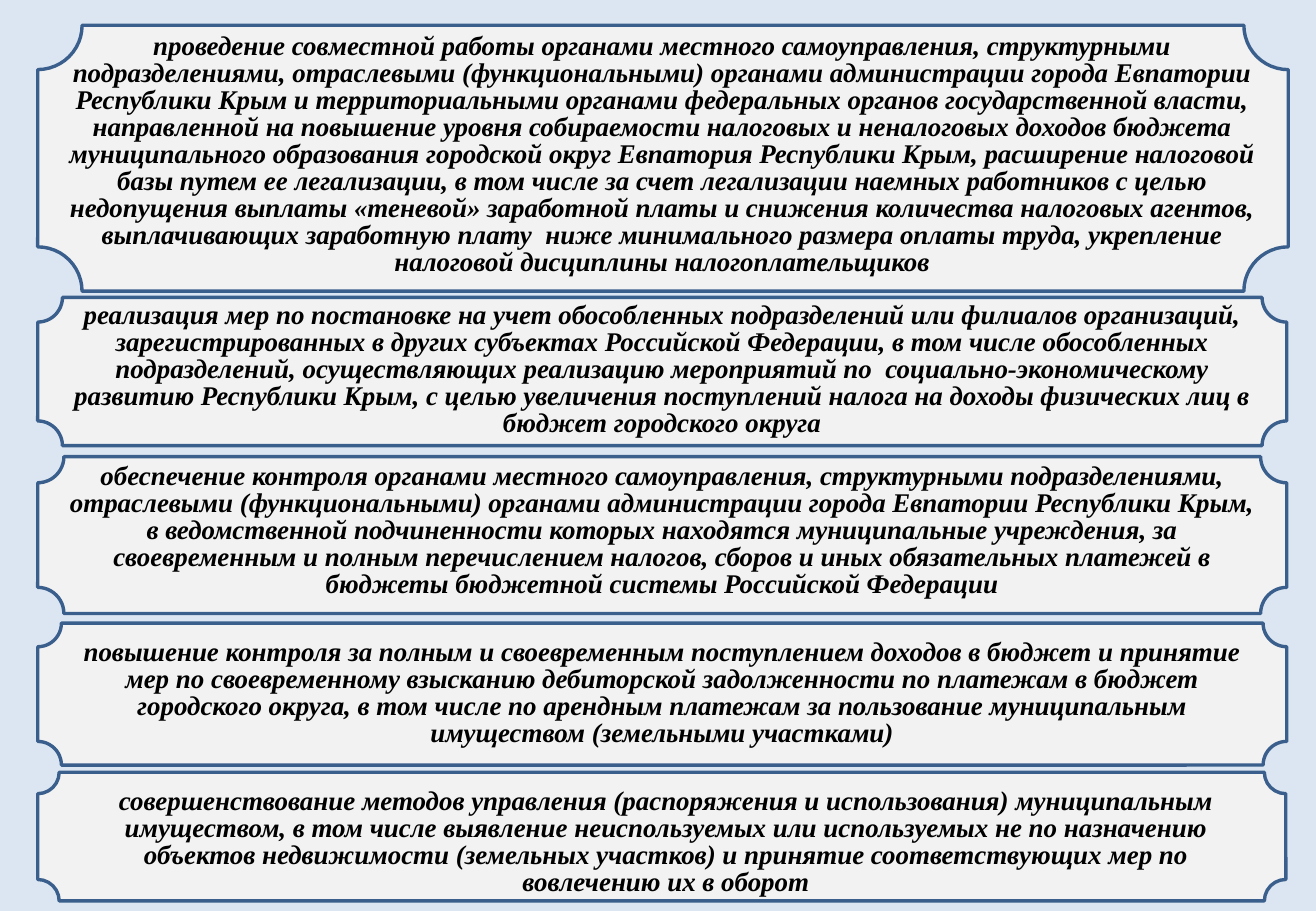
from pptx import Presentation
from pptx.dml.color import RGBColor
from pptx.enum.shapes import MSO_SHAPE
from pptx.enum.text import MSO_AUTO_SIZE, PP_ALIGN
from pptx.util import Cm, Pt

COLORS = {"back": "DCE6F2", "panel": "F2F2F2", "edge": "3A5F8C", "text": "000000"}
FONT = "Times New Roman"
SIZE = Pt(16)
LEFT = 0.79

PANELS = [
    (0.53, 26.14, 5.56, 0.35, 25.4, 0.05,
     "проведение совместной работы органами местного самоуправления, структурными "
     "подразделениями, отраслевыми (функциональными) органами администрации города Евпатории "
     "Республики Крым и территориальными органами федеральных органов государственной власти, "
     "направленной на повышение уровня собираемости налоговых и неналоговых доходов бюджета "
     "муниципального образования городской округ Евпатория Республики Крым, расширение налоговой "
     "базы путем ее легализации, в том числе за счет легализации наемных работников с целью "
     "недопущения выплаты «теневой» заработной платы и снижения количества налоговых агентов, "
     "выплачивающих заработную плату  ниже минимального размера оплаты труда, укрепление "
     "налоговой дисциплины налогоплательщиков"),
    (6.22, 26.11, 3.1, 0.35, 25.4, 0,
     "реализация мер по постановке на учет обособленных подразделений или филиалов организаций, "
     "зарегистрированных в других субъектах Российской Федерации, в том числе обособленных "
     "подразделений, осуществляющих реализацию мероприятий по  социально-экономическому "
     "развитию Республики Крым, с целью увеличения поступлений налога на доходы физических лиц в "
     "бюджет городского округа"),
    (9.55, 26.11, 3.28, 0.35, 25.4, 0.03,
     "обеспечение контроля органами местного самоуправления, структурными подразделениями, "
     "отраслевыми (функциональными) органами администрации города Евпатории Республики Крым, "
     "в ведомственной подчиненности которых находятся муниципальные учреждения, за "
     "своевременным и полным перечислением налогов, сборов и иных обязательных платежей в "
     "бюджеты бюджетной системы Российской Федерации"),
    (13.03, 26.11, 2.97, 0.35, 25.4, 0.23,
     "повышение контроля за полным и своевременным поступлением доходов в бюджет и принятие "
     "мер по своевременному взысканию дебиторской задолженности по платежам в бюджет "
     "городского округа, в том числе по арендным платежам за пользование муниципальным "
     "имуществом (земельными участками)"),
    (16.15, 26.09, 2.69, 0.63, 25, 0.23,
     "совершенствование методов управления (распоряжения и использования) муниципальным "
     "имуществом, в том числе выявление неиспользуемых или используемых не по назначению "
     "объектов недвижимости (земельных участков) и принятие соответствующих мер по "
     "вовлечению их в оборот"),
]


def color(name):
    return RGBColor.from_string(COLORS[name])


def add_frame(slide, left, top, width, height):
    frame = slide.shapes.add_shape(
        MSO_SHAPE.PLAQUE, Cm(left), Cm(top), Cm(width), Cm(height))
    frame.shadow.inherit = False
    frame.fill.solid()
    frame.fill.fore_color.rgb = color("panel")
    frame.line.color.rgb = color("edge")
    frame.line.width = Pt(2)


def add_text(slide, left, top, width, height, text):
    box = slide.shapes.add_textbox(Cm(left), Cm(top), Cm(width), Cm(height))
    body = box.text_frame
    body.word_wrap = True
    body.auto_size = MSO_AUTO_SIZE.SHAPE_TO_FIT_TEXT
    body.text = text
    para = body.paragraphs[0]
    para.alignment = PP_ALIGN.CENTER
    para.line_spacing = SIZE
    font = para.runs[0].font
    font.name = FONT
    font.size = SIZE
    font.bold = font.italic = True
    font.color.rgb = color("text")


def main():
    deck = Presentation()
    deck.slide_width = Cm(27.51)
    deck.slide_height = Cm(19.05)
    slide = deck.slides.add_slide(deck.slide_layouts[6])
    slide.background.fill.solid()
    slide.background.fill.fore_color.rgb = color("back")
    for top, width, height, *_ in PANELS:
        add_frame(slide, LEFT, top, width, height)
    for top, _, height, pad, span, drop, text in PANELS:
        add_text(slide, LEFT + pad, top + drop, span, height - drop, text)
    deck.save("out.pptx")


if __name__ == "__main__":
    main()
